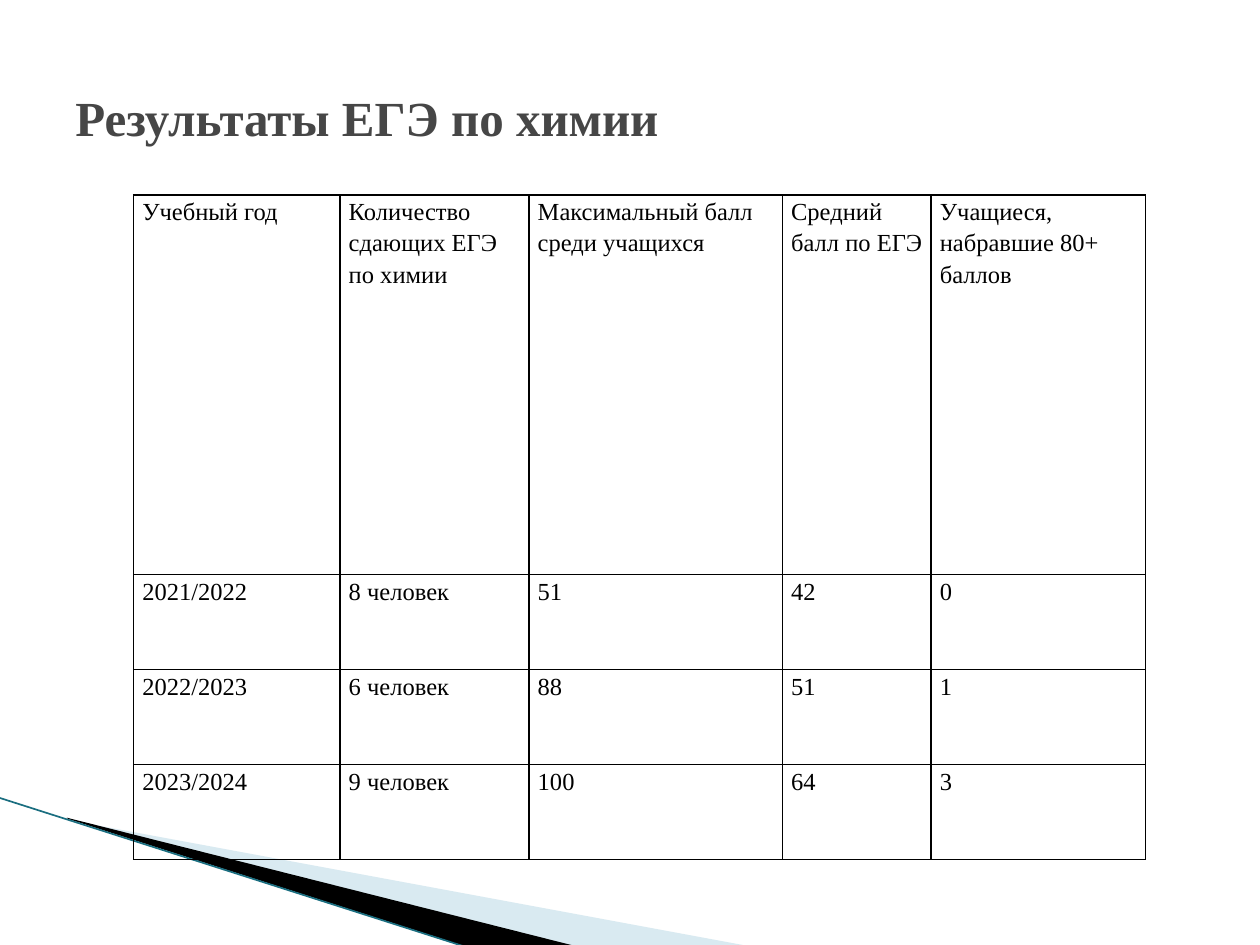
from dataclasses import dataclass

from lxml import etree
from pptx import Presentation
from pptx.dml.color import RGBColor
from pptx.enum.shapes import MSO_CONNECTOR
from pptx.enum.text import MSO_ANCHOR
from pptx.oxml.ns import qn
from pptx.util import Pt

STRAIGHT = MSO_CONNECTOR.STRAIGHT
MIDDLE = MSO_ANCHOR.MIDDLE
TOP = MSO_ANCHOR.TOP
Point = tuple[float, float]


@dataclass(frozen=True)
class Theme:
    font: str = "Times New Roman"
    title_size: float = 28
    cell_size: float = 14
    title: str = "464646"
    ink: str = "000000"
    wash: str = "A0CBDC"
    edge: str = "1A6E80"
    border_width: float = 1
    edge_width: float = 0.95


@dataclass(frozen=True)
class Wedge:
    points: tuple[Point, ...]
    color: str
    opacity: int = 100


THEME = Theme()
WEDGES = (
    Wedge(((39.6, 468.7), (428.4, 540.7), (328.3, 540.7), (39.6, 468)), THEME.wash, 40),
    Wedge(((38.2, 467.3), (329, 540.7), (267.8, 541.4), (38.9, 468)), THEME.ink),
)
COLUMN_WIDTHS = (118, 108, 144.8, 85, 122.4)
ROW_HEIGHTS = (217, 54.3, 54.3, 54.3)
RESULTS = (
    ("Учебный год", "Количество сдающих ЕГЭ по химии", "Максимальный балл среди учащихся",
     "Средний балл по ЕГЭ", "Учащиеся, набравшие 80+ баллов"),
    ("2021/2022", "8 человек", "51", "42", "0"),
    ("2022/2023", "6 человек", "88", "51", "1"),
    ("2023/2024", "9 человек", "100", "64", "3"),
)


def write_text(text_frame, text: str, *, size: float, color: str,
               bold: bool = False, spacing: float = 1.0) -> None:
    text_frame.word_wrap = True
    paragraph = text_frame.paragraphs[0]
    paragraph.line_spacing = spacing
    run = paragraph.add_run()
    run.text = text
    run.font.name = THEME.font
    run.font.size = Pt(size)
    run.font.bold = bold
    run.font.color.rgb = RGBColor.from_string(color)


def draw_wedge(slide, wedge: Wedge) -> None:
    start, *others = [(Pt(x), Pt(y)) for x, y in wedge.points]
    builder = slide.shapes.build_freeform(*start)
    builder.add_line_segments(others, close=True)
    shape = builder.convert_to_shape()
    shape.shadow.inherit = False
    shape.line.fill.background()
    shape.fill.solid()
    shape.fill.fore_color.rgb = RGBColor.from_string(wedge.color)
    if wedge.opacity < 100:
        color = shape.fill._xPr.find(qn("a:solidFill"))[0]
        etree.SubElement(color, qn("a:alpha"), val=str(wedge.opacity * 1000))


def draw_edge(slide, start: Point, end: Point) -> None:
    connector = slide.shapes.add_connector(STRAIGHT, *(Pt(value) for value in start + end))
    connector.line.color.rgb = RGBColor.from_string(THEME.edge)
    connector.line.width = Pt(THEME.edge_width)
    etree.SubElement(connector._element.spPr, qn("a:effectLst"))


def add_borders(cell) -> None:
    properties = cell._tc.get_or_add_tcPr()
    for position, side in enumerate(("lnL", "lnR", "lnT", "lnB")):
        line = etree.Element(qn(f"a:{side}"), w=str(Pt(THEME.border_width)))
        fill = etree.SubElement(line, qn("a:solidFill"))
        etree.SubElement(fill, qn("a:srgbClr"), val=THEME.ink)
        properties.insert(position, line)


def draw_table(slide, left: float, top: float) -> None:
    table = slide.shapes.add_table(
        len(ROW_HEIGHTS), len(COLUMN_WIDTHS), Pt(left), Pt(top),
        Pt(sum(COLUMN_WIDTHS)), Pt(sum(ROW_HEIGHTS))).table
    table.first_row = False
    table.horz_banding = False
    for column, width in zip(table.columns, COLUMN_WIDTHS):
        column.width = Pt(width)
    for row, height, texts in zip(table.rows, ROW_HEIGHTS, RESULTS):
        row.height = Pt(height)
        for cell, text in zip(row.cells, texts):
            cell.fill.background()
            cell.margin_left = cell.margin_right = Pt(5)
            cell.margin_top = cell.margin_bottom = Pt(0)
            cell.vertical_anchor = TOP
            write_text(cell.text_frame, text, size=THEME.cell_size,
                       color=THEME.ink, spacing=1.15)
            add_borders(cell)


def draw_title(slide, text: str) -> None:
    text_frame = slide.shapes.add_textbox(Pt(36), Pt(21.6), Pt(648), Pt(90)).text_frame
    text_frame.vertical_anchor = MIDDLE
    write_text(text_frame, text, size=THEME.title_size, color=THEME.title, bold=True)


def main() -> None:
    presentation = Presentation()
    presentation.slide_width = Pt(720)
    presentation.slide_height = Pt(540)
    slide = presentation.slides.add_slide(presentation.slide_layouts[6])
    for wedge in WEDGES:
        draw_wedge(slide, wedge)
    draw_edge(slide, (-0.7, 455.8), (267.1, 541.4))
    draw_table(slide, 76.3, 111.4)
    draw_title(slide, "Результаты ЕГЭ по химии")
    presentation.save("out.pptx")


if __name__ == "__main__":
    main()
